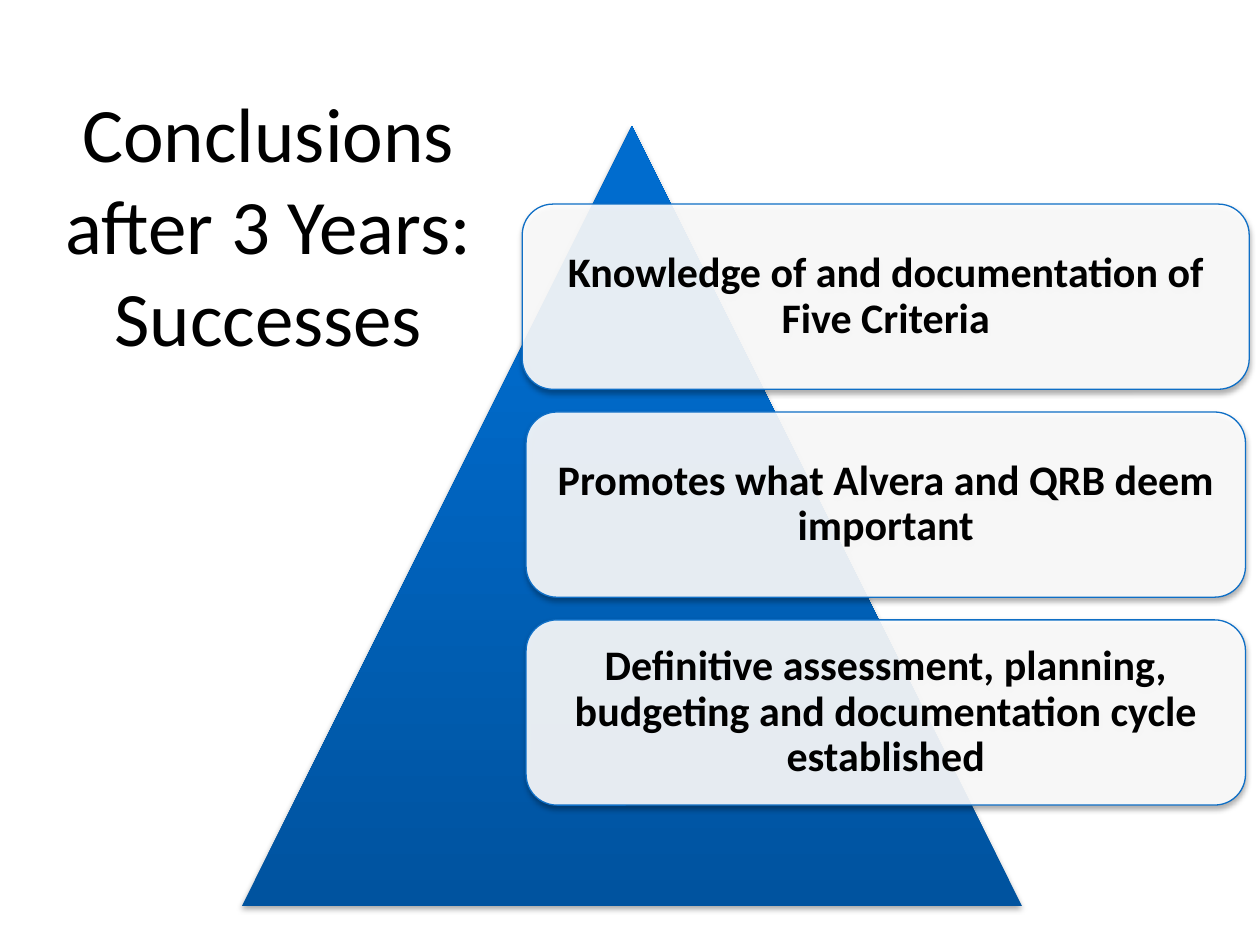
"""Build a slide with three successes stacked over a gradient pyramid."""
from lxml.etree import SubElement
from pptx import Presentation
from pptx.dml.color import RGBColor
from pptx.enum.shapes import MSO_SHAPE as Shape
from pptx.enum.text import MSO_ANCHOR as Anchor, PP_ALIGN as Align
from pptx.oxml.ns import qn
from pptx.util import Inches, Pt

TITLE = "Conclusions after 3 Years: Successes"
SUCCESSES = [
    ("Knowledge of and documentation of Five Criteria", 5.77),
    ("Promotes what Alvera and QRB deem important", 5.71),
    ("Definitive assessment, planning, budgeting and documentation cycle established", 5.71),
]
PYRAMID_STOPS = [(0, "00539F"), (0.8, "006CCE")]
CARD_CENTER, CARD_TOP, CARD_HEIGHT, CARD_STEP = 7.03, 1.62, 1.47, 1.65


def color(value):
    return RGBColor.from_string(value)


def add_shadow(shape):
    shape.shadow.inherit = False
    effects = shape._element.spPr.find(qn("a:effectLst"))
    shadow = SubElement(effects, qn("a:outerShdw"), blurRad=str(Pt(3.1)),
                        dist=str(Pt(1.8)), dir="5400000", rotWithShape="0")
    black = SubElement(shadow, qn("a:srgbClr"), val="000000")
    SubElement(black, qn("a:alpha"), val="35000")


def set_text(shape, text, size, bold=False):
    frame = shape.text_frame
    frame.text = text
    frame.word_wrap = True
    frame.vertical_anchor = Anchor.MIDDLE
    para = frame.paragraphs[0]
    para.alignment = Align.CENTER
    font = para.font
    font.name, font.size, font.bold = "Calibri", Pt(size), bold
    font.color.rgb = color("000000")
    return frame


def add_pyramid(page):
    pyramid = page.shapes.add_shape(
        Shape.ISOSCELES_TRIANGLE, Inches(1.92), Inches(1), Inches(6.19), Inches(6.19))
    pyramid.fill.gradient()
    pyramid.fill.gradient_angle = 90
    for stop, (position, shade) in zip(pyramid.fill.gradient_stops, PYRAMID_STOPS):
        stop.position = position
        stop.color.rgb = color(shade)
    pyramid.line.fill.background()
    add_shadow(pyramid)


def add_card(page, index, text, width):
    card = page.shapes.add_shape(
        Shape.ROUNDED_RECTANGLE, Inches(CARD_CENTER - width / 2),
        Inches(CARD_TOP + index * CARD_STEP), Inches(width), Inches(CARD_HEIGHT))
    card.fill.solid()
    card.fill.fore_color.rgb = color("FFFFFF")
    white = card._element.spPr.find(qn("a:solidFill")).find(qn("a:srgbClr"))
    SubElement(white, qn("a:alpha"), val="90000")
    card.line.color.rgb = color("0F6FC6")
    card.line.width = Pt(0.75)
    add_shadow(card)
    frame = set_text(card, text, 24, bold=True)
    frame.margin_left = frame.margin_right = Inches(0.03)
    frame.margin_top = frame.margin_bottom = Inches(0.03)
    frame.paragraphs[0].line_spacing = 0.9


def main():
    deck = Presentation()
    deck.slide_width, deck.slide_height = Inches(10), Inches(7.5)
    page = deck.slides.add_slide(deck.slide_layouts[5])
    title = page.shapes.title
    title.left, title.top = Inches(0.17), Inches(0.3)
    title.width, title.height = Inches(3.92), Inches(2.95)
    set_text(title, TITLE, 44)
    add_pyramid(page)
    for index, (text, width) in enumerate(SUCCESSES):
        add_card(page, index, text, width)
    deck.save("out.pptx")


if __name__ == "__main__":
    main()
